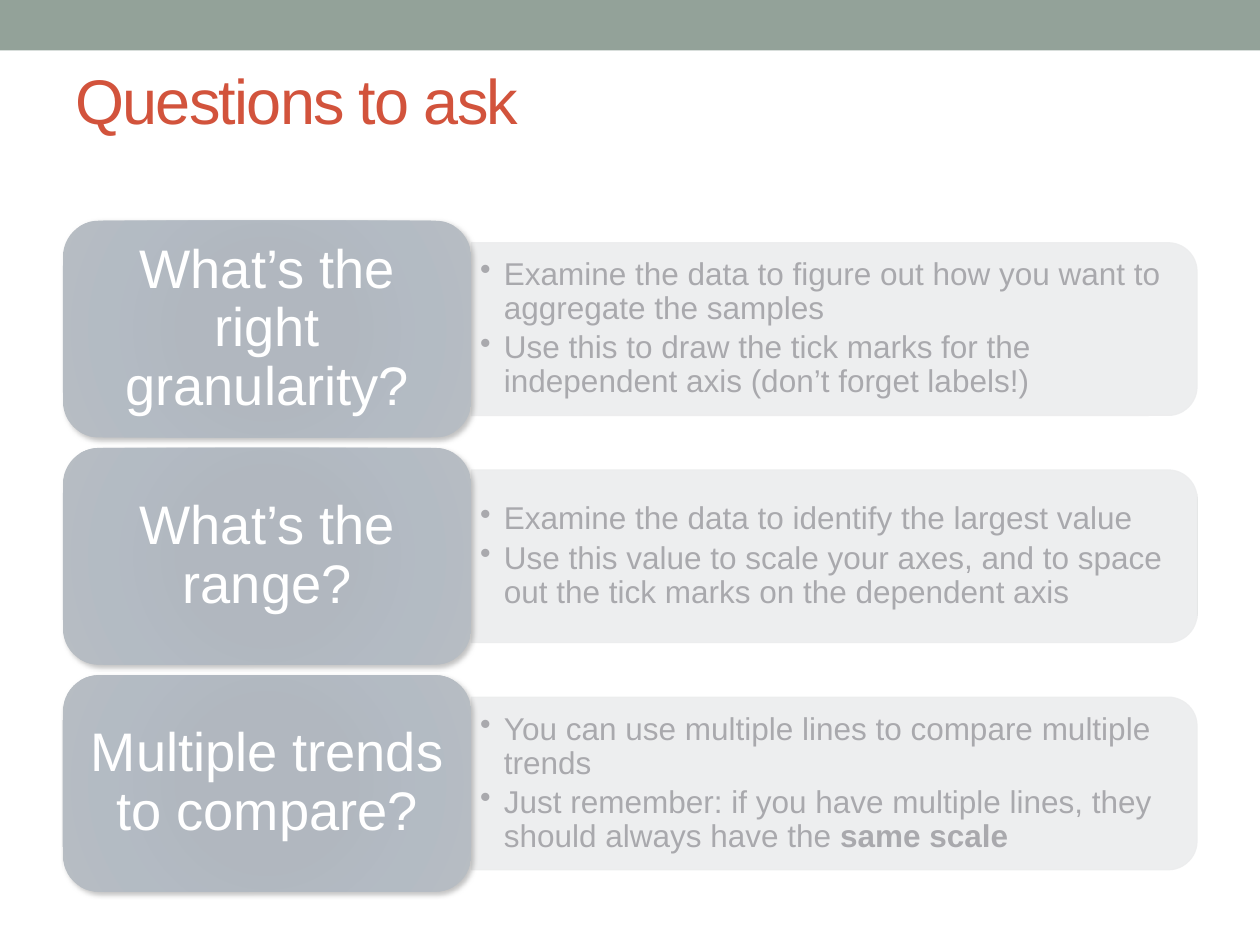
from lxml import etree
from pptx import Presentation
from pptx.dml.color import RGBColor
from pptx.enum.shapes import MSO_SHAPE
from pptx.enum.text import MSO_ANCHOR, PP_ALIGN
from pptx.oxml import parse_xml
from pptx.oxml.ns import qn
from pptx.util import Cm, Pt

RECT = MSO_SHAPE.RECTANGLE
ROUND = MSO_SHAPE.ROUNDED_RECTANGLE
TAB = MSO_SHAPE.ROUND_2_SAME_RECTANGLE
MIDDLE = MSO_ANCHOR.MIDDLE
LEFT, CENTER = PP_ALIGN.LEFT, PP_ALIGN.CENTER
FONT = "Arial"
NS = 'xmlns:a="http://schemas.openxmlformats.org/drawingml/2006/main"'
HEX = {
    "band": "93A299", "title": "D2533C", "bar": "D0D2D4",
    "ink": "292934", "white": "FFFFFF", "shade": "000000",
}
STOPS = [(0, "3B4D61"), (34, "3C4D60"), (70, "43566B"), (100, "4C5A6A")]
ROWS = [
    ("What’s the right granularity?",
     ["Examine the data to figure out how you want to aggregate the samples",
      "Use this to draw the tick marks for the independent axis "
      "(don’t forget labels!)"], ""),
    ("What’s the range?",
     ["Examine the data to identify the largest value",
      "Use this value to scale your axes, and to space out the tick marks "
      "on the dependent axis"], ""),
    ("Multiple trends to compare?",
     ["You can use multiple lines to compare multiple trends",
      "Just remember: if you have multiple lines, they should always "
      "have the "], "same scale"),
]
TOP, STEP = 4.45, 4.58
CARD_X, CARD_W, CARD_H = 1.27, 8.23, 4.37
BAR_X, BAR_W, BAR_H = 9.5, 14.63, 3.48
TEXT_W, TEXT_H = 14.45, 3.15
VEIL_TOP, VEIL_W, VEIL_H = 4.24, 23.5, 4.65
VEIL_X = [0.84, 0.64, 1.27]


def color(name):
    return RGBColor.from_string(HEX[name])


def fade(fill, name, alpha):
    fill.solid()
    fill.fore_color.rgb = color(name)
    for node in fill._xPr.iter(qn("a:srgbClr")):
        etree.SubElement(node, qn("a:alpha"), val=str(alpha * 1000))


def add_box(slide, kind, x, y, w, h):
    shape = slide.shapes.add_shape(kind, Cm(x), Cm(y), Cm(w), Cm(h))
    shape.shadow.inherit = False
    shape.line.fill.background()
    return shape


def set_frame(frame, side, edge):
    frame.word_wrap = True
    frame.vertical_anchor = MIDDLE
    frame.margin_left = frame.margin_right = Cm(side)
    frame.margin_top = frame.margin_bottom = Cm(edge)


def style(para, size, name, align=LEFT):
    para.alignment = align
    for run in para.runs:
        run.font.name = FONT
        run.font.size = Pt(size)
        run.font.color.rgb = color(name)


def add_text(slide, x, y, w, h, side, edge):
    frame = slide.shapes.add_textbox(Cm(x), Cm(y), Cm(w), Cm(h)).text_frame
    set_frame(frame, side, edge)
    return frame


def add_title(slide, text):
    frame = add_text(slide, 1.27, 0.64, 22.86, 2.74, 0.25, 0.13)
    frame.text = text
    para = frame.paragraphs[0]
    style(para, 36, "title")
    para.runs[0]._r.get_or_add_rPr().set("spc", "-100")


def add_bar(slide, mid):
    x = BAR_X + (BAR_W - BAR_H) / 2
    bar = add_box(slide, TAB, x, mid - BAR_W / 2, BAR_H, BAR_W)
    bar.rotation = 90
    fade(bar.fill, "bar", 90)
    bar.line.width = Pt(0.75)
    fade(bar.line.fill, "bar", 90)


def add_list(slide, mid, items, bold):
    frame = add_text(slide, BAR_X, mid - TEXT_H / 2, TEXT_W, TEXT_H, 0.18, 0.1)
    frame.text = "\n".join(items)
    if bold:
        run = frame.paragraphs[-1].add_run()
        run.text = bold
        run.font.bold = True
    for para in frame.paragraphs:
        style(para, 18, "ink")
        para.line_spacing = 0.9
        para.space_after = Pt(3)
        props = para._p.get_or_add_pPr()
        props.set("marL", str(Cm(0.48)))
        props.set("indent", str(-Cm(0.48)))
        etree.SubElement(props, qn("a:buChar"), char="•")


def add_card(slide, mid, text):
    card = add_box(slide, ROUND, CARD_X, mid - CARD_H / 2, CARD_W, CARD_H)
    stops = "".join(
        f'<a:gs pos="{pos * 1000}"><a:srgbClr val="{tone}"/></a:gs>'
        for pos, tone in STOPS)
    card.fill.background()
    props = card._element.spPr
    props.replace(props.find(qn("a:noFill")), parse_xml(
        f'<a:gradFill {NS} rotWithShape="1"><a:gsLst>{stops}</a:gsLst>'
        '<a:path path="circle"><a:fillToRect l="100000" t="100000" '
        'r="100000" b="100000"/></a:path></a:gradFill>'))
    props.replace(props.find(qn("a:effectLst")), parse_xml(
        f'<a:effectLst {NS}><a:outerShdw blurRad="{Pt(3)}" dist="{Pt(2)}" '
        f'dir="2700000" rotWithShape="0"><a:srgbClr val="{HEX["shade"]}">'
        '<a:alpha val="60000"/></a:srgbClr></a:outerShdw></a:effectLst>'))
    frame = card.text_frame
    set_frame(frame, 0.33, 0.16)
    frame.text = text
    style(frame.paragraphs[0], 31, "white", CENTER)
    frame.paragraphs[0].line_spacing = 0.9


def add_veil(slide, x, y):
    veil = add_box(slide, RECT, x, y, VEIL_W, VEIL_H)
    fade(veil.fill, "white", 60)


def main():
    deck = Presentation()
    deck.slide_width, deck.slide_height = Cm(25.4), Cm(19.05)
    slide = deck.slides.add_slide(deck.slide_layouts[6])
    band = add_box(slide, RECT, 0, 0, 25.4, 1.02)
    band.fill.solid()
    band.fill.fore_color.rgb = color("band")
    add_title(slide, "Questions to ask")
    for i, (head, items, bold) in enumerate(ROWS):
        mid = TOP + CARD_H / 2 + i * STEP
        add_bar(slide, mid)
        add_list(slide, mid, items, bold)
        add_card(slide, mid, head)
    for i, x in enumerate(VEIL_X):
        add_veil(slide, x, VEIL_TOP + i * VEIL_H)
    deck.save("out.pptx")


if __name__ == "__main__":
    main()
